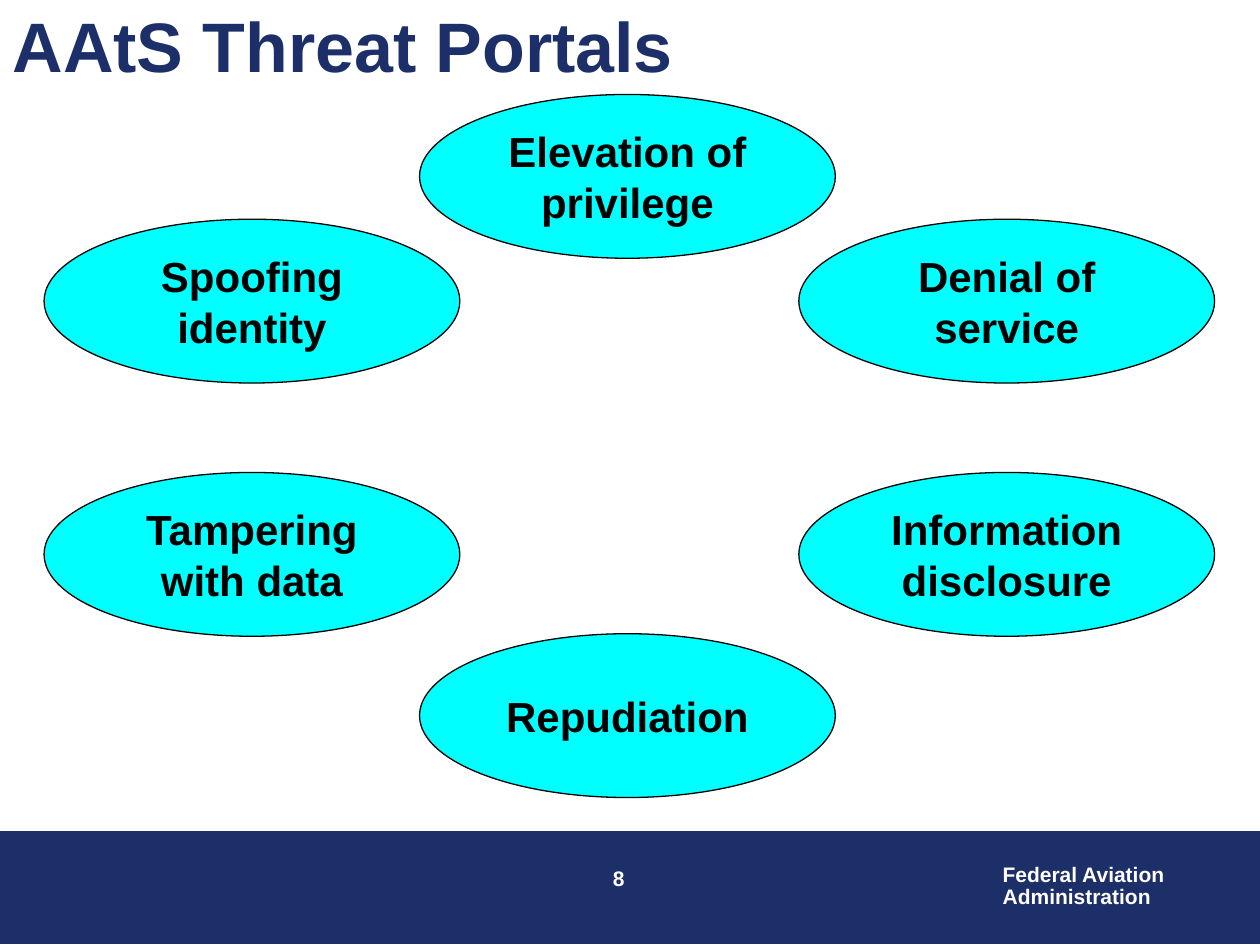
from pptx import Presentation
from pptx.dml.color import RGBColor
from pptx.enum.shapes import MSO_SHAPE
from pptx.enum.text import MSO_ANCHOR, PP_ALIGN
from pptx.util import Inches, Pt

NAVY, CYAN, BLACK, WHITE = "1D2F68", "00FFFF", "000000", "FFFFFF"

TITLE = "AAtS Threat Portals"
PAGE_NUMBER = "8"
AGENCY = ["Federal Aviation", "Administration"]

LEFT, CENTER, RIGHT = 0.35, 3.33, 6.34
TOP, UPPER, LOWER, BOTTOM = 0.75, 1.74, 3.75, 5.03
OVAL_WIDTH, OVAL_HEIGHT = 3.3, 1.3
THREATS = [
    ("Spoofing identity", LEFT, UPPER),
    ("Information disclosure", RIGHT, LOWER),
    ("Elevation of privilege", CENTER, TOP),
    ("Denial of service", RIGHT, UPPER),
    ("Tampering with data", LEFT, LOWER),
    ("Repudiation", CENTER, BOTTOM),
]


def box(left, top, width, height):
    return Inches(left), Inches(top), Inches(width), Inches(height)


def rgb(color):
    return RGBColor.from_string(color)


def write(text_frame, lines, size, color, alignment, line_spacing=None):
    """Put each line in its own bold Arial paragraph."""
    for index, line in enumerate(lines):
        paragraph = text_frame.paragraphs[0] if index == 0 else text_frame.add_paragraph()
        paragraph.alignment = alignment
        if line_spacing:
            paragraph.line_spacing = line_spacing
        run = paragraph.add_run()
        run.text = line
        run.font.name = "Arial"
        run.font.size = Pt(size)
        run.font.bold = True
        run.font.color.rgb = rgb(color)


def add_filled_shape(slide, preset, bounds, fill, line):
    shape = slide.shapes.add_shape(preset, *box(*bounds))
    shape.shadow.inherit = False
    shape.fill.solid()
    shape.fill.fore_color.rgb = rgb(fill)
    shape.line.color.rgb = rgb(line)
    shape.line.width = Pt(0.75)
    return shape


def add_footer(slide):
    add_filled_shape(slide, MSO_SHAPE.RECTANGLE, (0, 6.6, 10, 0.89), NAVY, NAVY)
    number = slide.shapes.add_textbox(*box(3.87, 6.82, 2.08, 0.5))
    number.text_frame.word_wrap = True
    write(number.text_frame, [PAGE_NUMBER], 12, WHITE, PP_ALIGN.CENTER)
    agency = slide.shapes.add_textbox(*box(7.86, 6.82, 1.5, 0.44))
    agency.text_frame.word_wrap = False
    write(agency.text_frame, AGENCY, 12, WHITE, PP_ALIGN.LEFT, 0.85)


def add_title(slide):
    title = slide.shapes.title
    title.left, title.top, title.width, title.height = box(0, 0.02, 9.27, 0.67)
    title.text_frame.vertical_anchor = MSO_ANCHOR.MIDDLE
    write(title.text_frame, [TITLE], 40, NAVY, PP_ALIGN.LEFT)


def add_threat(slide, label, left, top):
    bounds = (left, top, OVAL_WIDTH, OVAL_HEIGHT)
    oval = add_filled_shape(slide, MSO_SHAPE.OVAL, bounds, CYAN, BLACK)
    oval.text_frame.word_wrap = True
    oval.text_frame.vertical_anchor = MSO_ANCHOR.MIDDLE
    write(oval.text_frame, [label], 24, BLACK, PP_ALIGN.CENTER)


def main():
    presentation = Presentation()
    presentation.slide_width = Inches(10)
    presentation.slide_height = Inches(7.5)
    slide = presentation.slides.add_slide(presentation.slide_layouts.get_by_name("Title Only"))
    add_footer(slide)
    add_title(slide)
    for label, left, top in THREATS:
        add_threat(slide, label, left, top)
    presentation.save("out.pptx")


if __name__ == "__main__":
    main()
